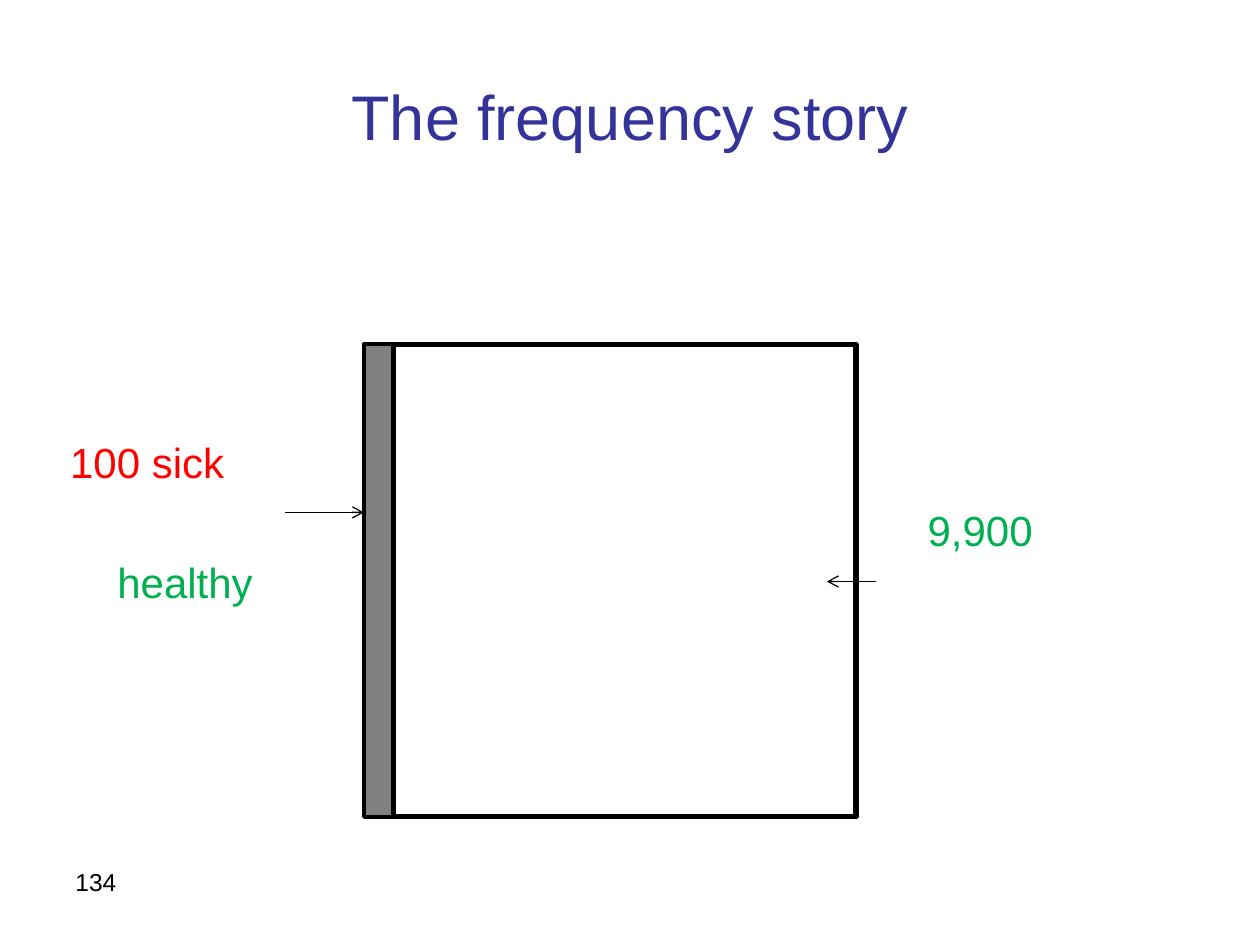
from dataclasses import dataclass

from lxml import etree
from pptx import Presentation
from pptx.dml.color import RGBColor
from pptx.enum.shapes import MSO_CONNECTOR, MSO_SHAPE
from pptx.enum.text import MSO_ANCHOR, PP_ALIGN
from pptx.oxml.ns import qn
from pptx.util import Pt

RECTANGLE = MSO_SHAPE.RECTANGLE
STRAIGHT = MSO_CONNECTOR.STRAIGHT
TOP, MIDDLE = MSO_ANCHOR.TOP, MSO_ANCHOR.MIDDLE
LEFT, CENTER = PP_ALIGN.LEFT, PP_ALIGN.CENTER


@dataclass(frozen=True)
class Theme:
    font: str = "Arial"
    title: RGBColor = RGBColor(0x33, 0x33, 0x99)
    ink: RGBColor = RGBColor(0, 0, 0)
    paper: RGBColor = RGBColor(0xFF, 0xFF, 0xFF)
    sick: RGBColor = RGBColor(0xFF, 0, 0)
    healthy: RGBColor = RGBColor(0, 0xB0, 0x50)
    sick_area: RGBColor = RGBColor(0x80, 0x80, 0x80)
    title_size: int = 36
    label_size: int = 24
    number_size: int = 14


THEME = Theme()


def apply(target, values):
    for name, value in values.items():
        setattr(target, name, value)


def add_text_frame(slide, box, anchor=TOP):
    frame = slide.shapes.add_textbox(*map(Pt, box)).text_frame
    apply(frame, {"word_wrap": True, "vertical_anchor": anchor})
    return frame


def write(paragraph, text, size, color, **layout):
    paragraph.text = text
    apply(paragraph, {"alignment": LEFT, **layout})
    for run in paragraph.runs:
        apply(run.font, {"name": THEME.font, "size": Pt(size)})
        run.font.color.rgb = color


def add_tab_stops(paragraph, positions):
    properties = paragraph._p.get_or_add_pPr()
    stops = etree.SubElement(properties, qn("a:tabLst"))
    for position in positions:
        etree.SubElement(stops, qn("a:tab"), pos=str(Pt(position)), algn="l")


def add_title(slide, box):
    frame = add_text_frame(slide, box, MIDDLE)
    write(frame.paragraphs[0], "The frequency story", THEME.title_size,
          THEME.title, alignment=CENTER)


def add_slide_number(slide, box):
    frame = add_text_frame(slide, box)
    write(frame.paragraphs[0], "134", THEME.number_size, THEME.ink)


def add_group_labels(slide, box):
    frame = add_text_frame(slide, box)
    write(frame.paragraphs[0], "100 sick", THEME.label_size, THEME.sick)
    # The count stands right of the square, its noun on the next line at left
    healthy = frame.add_paragraph()
    write(healthy, "\t\t9,900 \v\thealthy", THEME.label_size, THEME.healthy,
          space_before=Pt(9), line_spacing=Pt(29.7))
    add_tab_stops(healthy, (27, 490))


def add_area(slide, box, fill, line_width):
    area = slide.shapes.add_shape(RECTANGLE, *map(Pt, box))
    area.shadow.inherit = False
    area.fill.solid()
    area.fill.fore_color.rgb = fill
    area.line.color.rgb = THEME.ink
    area.line.width = Pt(line_width)


def add_arrow(slide, start_x, end_x, y):
    arrow = slide.shapes.add_connector(STRAIGHT, *map(Pt, (start_x, y, end_x, y)))
    arrow.line.color.rgb = THEME.ink
    arrow.line.width = Pt(0.75)
    etree.SubElement(arrow.line._get_or_add_ln(), qn("a:tailEnd"), type="arrow")
    etree.SubElement(arrow._element.spPr, qn("a:effectLst"))


def add_population_square(slide, box):
    left, top, width, height = box
    sick_width = 16.7
    split = left + sick_width
    right = left + width

    # Areas of the sick and the healthy
    add_area(slide, (left, top, sick_width, height), THEME.sick_area, 2.25)
    add_area(slide, (split, top, width - sick_width, height), THEME.paper, 3)

    # Arrows from the labels to the areas
    add_arrow(slide, left - 45, left, top + 96)
    add_arrow(slide, right + 11.5, right - 16.7, top + 135.5)


def main():
    presentation = Presentation()
    apply(presentation, {"slide_width": Pt(720), "slide_height": Pt(540)})
    slide = presentation.slides.add_slide(presentation.slide_layouts[6])

    add_slide_number(slide, (36, 492, 168, 37.5))
    add_title(slide, (36, 21, 648, 90))
    add_group_labels(slide, (33, 246, 648, 105))
    add_population_square(slide, (208, 196.8, 281.2, 270))

    presentation.save("out.pptx")


if __name__ == "__main__":
    main()
